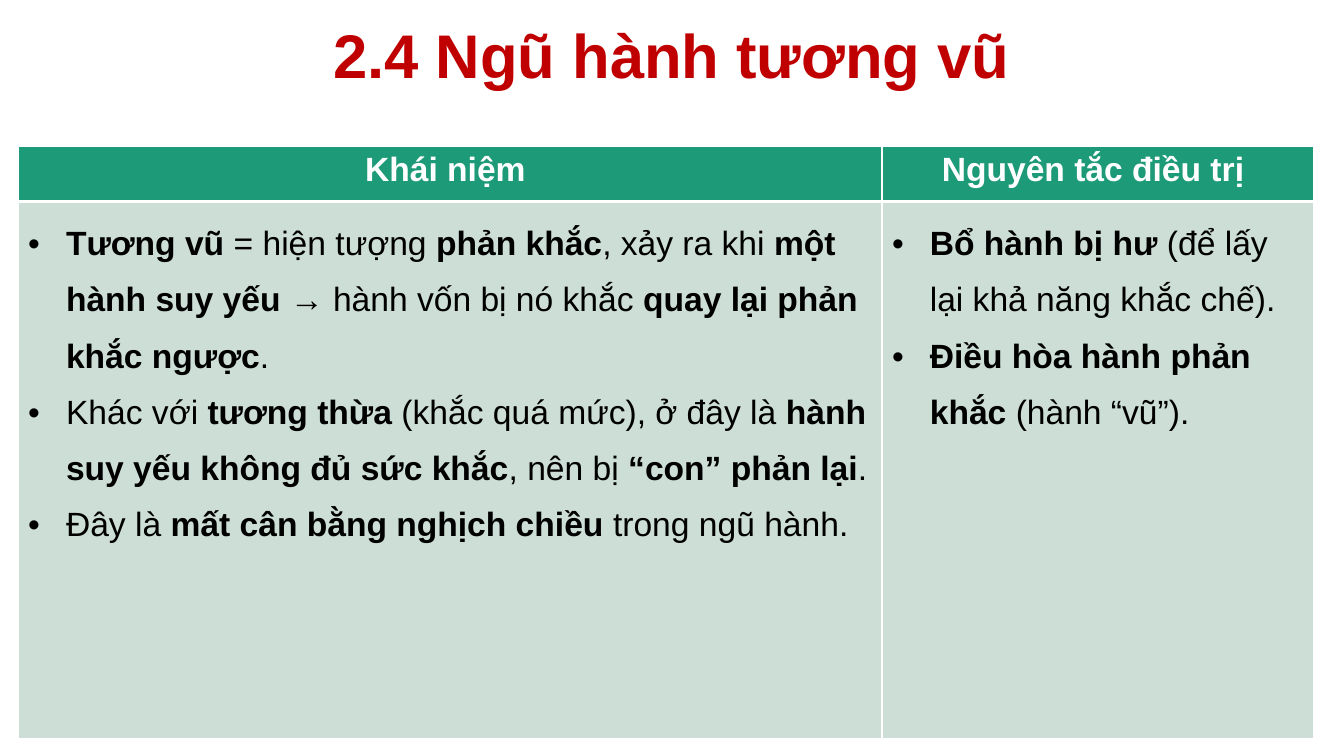
"""Build the slide on the Ngũ hành tương vũ concept and its treatment."""
from dataclasses import dataclass

from lxml import etree
from pptx import Presentation
from pptx.dml.color import RGBColor
from pptx.enum.text import MSO_ANCHOR, PP_ALIGN
from pptx.oxml.ns import qn
from pptx.util import Pt

CENTER = PP_ALIGN.CENTER
LEFT = PP_ALIGN.LEFT
MIDDLE = MSO_ANCHOR.MIDDLE
COLORS = {
    "title": "C00000",
    "header": "1D9A78",
    "body": "CDDED6",
    "white": "FFFFFF",
    "black": "000000",
}
FONT = "Arial"
HEADER_HEIGHT = 39.6
BODY_HEIGHT = 383.76
BULLET_INDENT = 27


@dataclass
class Column:
    """A table column; asterisks in the points enclose bold words."""

    heading: str
    width: float
    points: list[str]


COLUMNS = [
    Column("Khái niệm ", 617.04, [
        "*Tương vũ* = hiện tượng *phản khắc*, xảy ra khi *một hành suy yếu*"
        " → hành vốn bị nó khắc *quay lại phản khắc ngược*.",
        "Khác với *tương thừa* (khắc quá mức), ở đây là "
        "*hành suy yếu không đủ sức khắc*, nên bị *“con” phản lại*.",
        "Đây là *mất cân bằng nghịch chiều* trong ngũ hành.",
    ]),
    Column("Nguyên tắc điều trị ", 308.16, [
        "*Bổ hành bị hư* (để lấy lại khả năng khắc chế).",
        "*Điều hòa hành phản khắc* (hành “vũ”).",
    ]),
]


def write_text(paragraph, text: str, *, size: float = 24, color: str = "black",
               alignment=LEFT, spacing: float = 1.0, bullet: bool = False) -> None:
    """Write text into a paragraph, with the parts between asterisks in bold."""
    paragraph.alignment = alignment
    paragraph.line_spacing = spacing
    if bullet:
        properties = paragraph._p.get_or_add_pPr()
        properties.set("marL", str(Pt(BULLET_INDENT)))
        properties.set("indent", str(-Pt(BULLET_INDENT)))
        etree.SubElement(properties, qn("a:buFont"), typeface=FONT)
        etree.SubElement(properties, qn("a:buChar"), char="•")
    for index, part in enumerate(text.split("*")):
        if part:
            run = paragraph.add_run()
            run.text = part
            run.font.name = FONT
            run.font.size = Pt(size)
            run.font.bold = index % 2 == 1
            run.font.color.rgb = RGBColor.from_string(COLORS[color])


def format_cell(cell, fill: str, top: float, bottom: float) -> None:
    """Fill a cell and give it white borders."""
    cell.fill.solid()
    cell.fill.fore_color.rgb = RGBColor.from_string(COLORS[fill])
    properties = cell._tc.get_or_add_tcPr()
    borders = {"a:lnL": 1, "a:lnR": 1, "a:lnT": top, "a:lnB": bottom}
    for position, (tag, width) in enumerate(borders.items()):
        line = etree.Element(qn(tag), w=str(Pt(width)))
        line_fill = etree.SubElement(line, qn("a:solidFill"))
        etree.SubElement(line_fill, qn("a:srgbClr"), val=COLORS["white"])
        properties.insert(position, line)


def add_title(slide, text: str) -> None:
    """Place and format the title placeholder."""
    title = slide.shapes.title
    title.left, title.top, title.width, title.height = Pt(66), Pt(0), Pt(828), Pt(83.5)
    title.text_frame.vertical_anchor = MIDDLE
    write_text(title.text_frame.paragraphs[0], f"*{text}*", size=44, color="title",
               alignment=CENTER, spacing=0.9)


def add_concept_table(slide, columns: list[Column]) -> None:
    """Draw the table with one heading and one bulleted cell per column."""
    width = sum(column.width for column in columns)
    table = slide.shapes.add_table(
        2, len(columns), Pt(12.96), Pt(104.4), Pt(width), Pt(HEADER_HEIGHT + BODY_HEIGHT)
    ).table
    table.horz_banding = False
    table.rows[0].height = Pt(HEADER_HEIGHT)
    table.rows[1].height = Pt(BODY_HEIGHT)
    for index, column in enumerate(columns):
        table.columns[index].width = Pt(column.width)
        header, body = table.cell(0, index), table.cell(1, index)
        format_cell(header, "header", top=1, bottom=3)
        format_cell(body, "body", top=3, bottom=1)
        write_text(header.text_frame.paragraphs[0], f"*{column.heading}*",
                   color="white", alignment=CENTER)
        for number, point in enumerate(column.points):
            frame = body.text_frame
            paragraph = frame.add_paragraph() if number else frame.paragraphs[0]
            write_text(paragraph, point, spacing=1.5, bullet=True)


def main() -> None:
    """Create and save the presentation."""
    presentation = Presentation()
    presentation.slide_width, presentation.slide_height = Pt(960), Pt(540)
    slide = presentation.slides.add_slide(presentation.slide_layouts.get_by_name("Title Only"))
    add_title(slide, "2.4 Ngũ hành tương vũ")
    add_concept_table(slide, COLUMNS)
    presentation.save("out.pptx")


if __name__ == "__main__":
    main()
